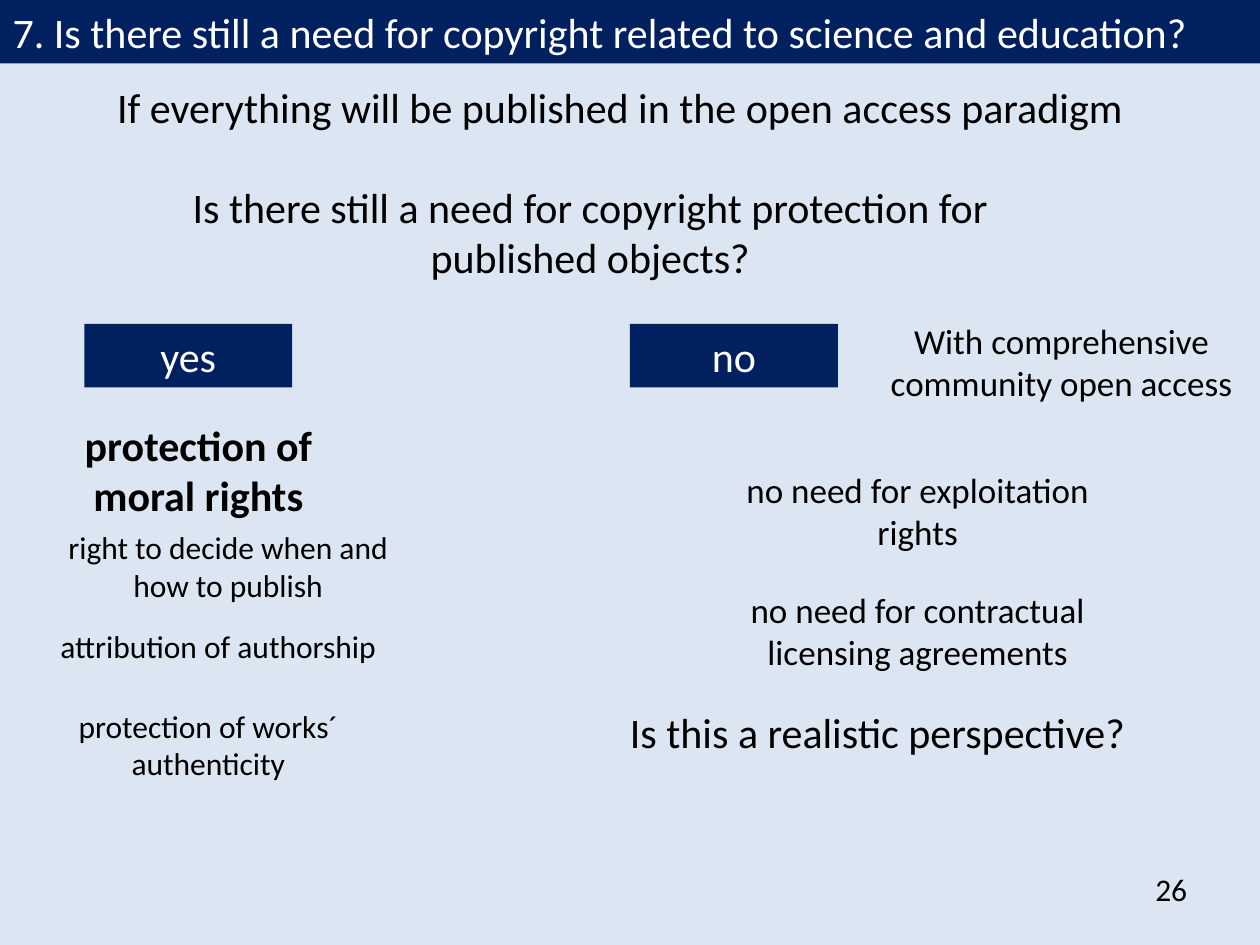
from pptx import Presentation
from pptx.dml.color import RGBColor
from pptx.enum.shapes import MSO_SHAPE as Shape
from pptx.enum.text import MSO_ANCHOR as Anchor, MSO_AUTO_SIZE as AutoSize, PP_ALIGN as Align
from pptx.util import Cm, Pt

NAVY, PALE, BLACK, WHITE = "002060", "DCE6F2", "000000", "FFFFFF"


def color(value):
    return RGBColor.from_string(value)


def write(frame, text, size=24, ink=BLACK, bold=False, align=Align.CENTER,
          anchor=Anchor.TOP, font="Calibri"):
    frame.word_wrap = True
    frame.auto_size = AutoSize.NONE
    frame.vertical_anchor = anchor
    paragraph = frame.paragraphs[0]
    paragraph.alignment = align
    run = paragraph.add_run()
    run.text = text
    run.font.name = font
    run.font.size = Pt(size)
    run.font.bold = bold
    run.font.color.rgb = color(ink)


class Board:
    def __init__(self, slide):
        self.slide = slide
        slide.background.fill.solid()
        slide.background.fill.fore_color.rgb = color(PALE)

    def title(self, text, width, height):
        heading = self.slide.shapes.title
        heading.left, heading.top = Cm(0), Cm(0)
        heading.width, heading.height = Cm(width), Cm(height)
        heading.fill.solid()
        heading.fill.fore_color.rgb = color(NAVY)
        write(heading.text_frame, text, ink=WHITE, align=Align.LEFT)

    def note(self, text, left, top, width, height, **style):
        note = self.slide.shapes.add_textbox(Cm(left), Cm(top), Cm(width), Cm(height))
        write(note.text_frame, text, **style)
        return note

    def answer(self, text, left, top, width=4.19, height=1.28):
        answer = self.slide.shapes.add_shape(
            Shape.RECTANGLE, Cm(left), Cm(top), Cm(width), Cm(height))
        answer.shadow.inherit = False
        answer.fill.solid()
        answer.fill.fore_color.rgb = color(NAVY)
        answer.line.fill.background()
        write(answer.text_frame, text, ink=WHITE)

    def page_number(self, text, left, top, width, height):
        frame = self.note(text, left, top, width, height,
                          size=18, align=Align.LEFT).text_frame
        frame.margin_left = frame.margin_right = Cm(0)
        frame.margin_top = frame.margin_bottom = Cm(0)


def main():
    deck = Presentation()
    deck.slide_width, deck.slide_height = Cm(25.4), Cm(19.05)
    board = Board(deck.slides.add_slide(deck.slide_layouts[5]))

    board.title("7. Is there still a need for copyright related to science and education?",
                25.4, 1.28)
    board.note("If everything will be published in the open access paradigm",
               1.3, 1.52, 22.4, 1.28)
    board.note("Is there still a need for copyright protection for published objects?",
               2.9, 3.53, 18, 2.31)

    for reply, left in (("yes", 1.7), ("no", 12.7)):
        board.answer(reply, left, 6.53)

    board.note("protection of moral rights", 0.7, 8.33, 6.6, 2.31, bold=True)
    moral_rights = (
        ("right to decide when and how to publish", 0.5, 10.52, 1.8),
        ("attribution of authorship", 0.3, 12.52, 1.02),
        ("protection of works´ authenticity", 0.1, 14.12, 1.8),
    )
    for right, left, top, height in moral_rights:
        board.note(right, left, top, 8.2, height, size=18)

    open_access_effects = (
        ("With comprehensive community open access", 17.4, 6.32),
        ("no need for exploitation rights", 14.5, 9.32),
        ("no need for contractual licensing agreements", 14.5, 11.73),
    )
    for effect, left, top in open_access_effects:
        board.note(effect, left, top, 8, 1.96, size=20)

    board.note("Is this a realistic perspective?", 10.49, 14.12, 14.4, 1.28)
    board.page_number("26", 23.29, 17.53, 1.22, 1.32)

    deck.save("out.pptx")


if __name__ == "__main__":
    main()
